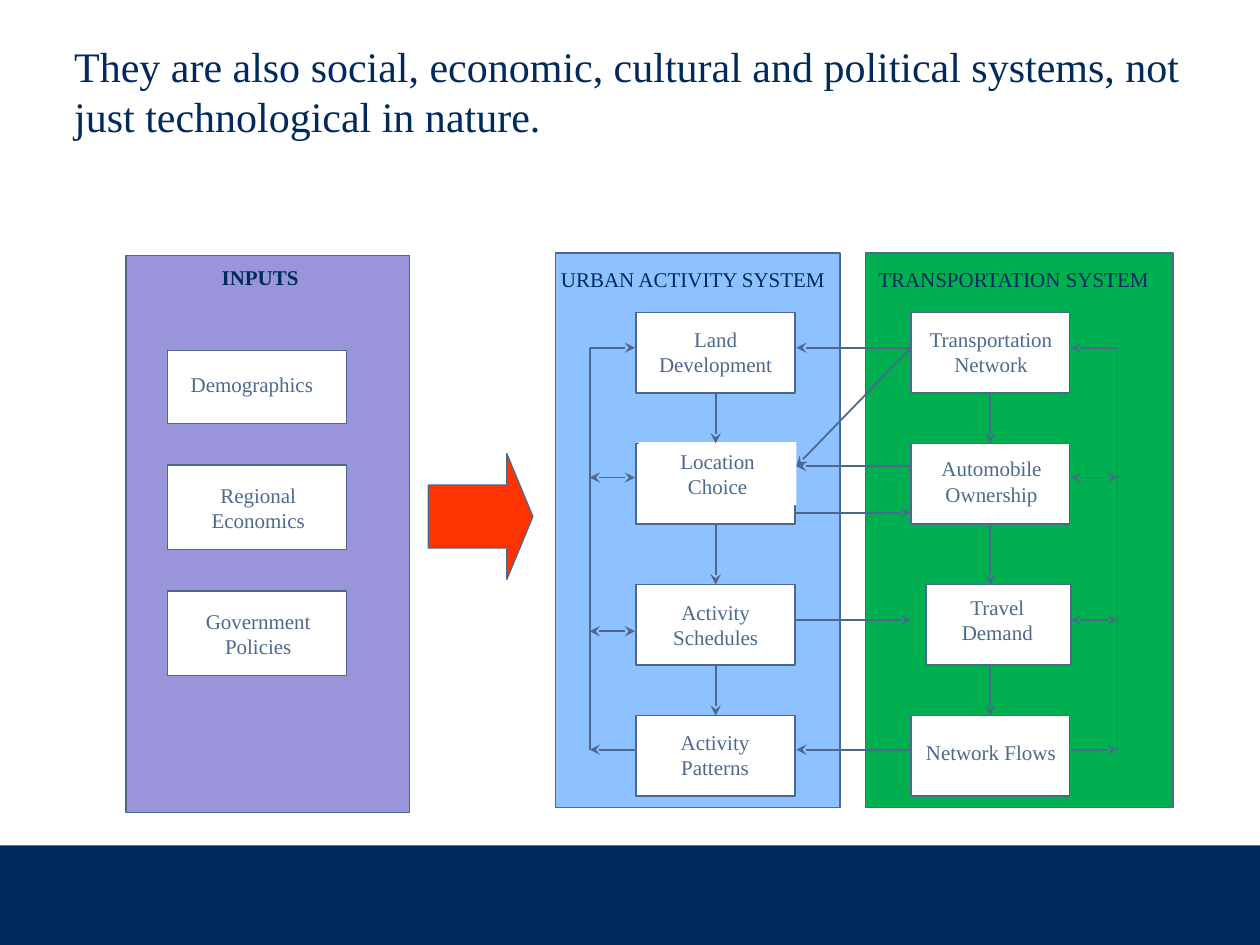
from typing import NamedTuple, Optional

from lxml import etree
from pptx import Presentation
from pptx.dml.color import RGBColor
from pptx.enum.shapes import MSO_CONNECTOR, MSO_SHAPE
from pptx.enum.text import MSO_AUTO_SIZE, PP_ALIGN
from pptx.oxml.ns import qn
from pptx.util import Inches, Pt

RECTANGLE, RIGHT_ARROW = MSO_SHAPE.RECTANGLE, MSO_SHAPE.RIGHT_ARROW
STRAIGHT = MSO_CONNECTOR.STRAIGHT
FIT_SHAPE = MSO_AUTO_SIZE.SHAPE_TO_FIT_TEXT
LEFT, CENTER = PP_ALIGN.LEFT, PP_ALIGN.CENTER
TOP_SITE, BOTTOM_SITE = 0, 2

NAVY = RGBColor(0x00, 0x2A, 0x5C)
SLATE = RGBColor(0x4C, 0x69, 0x8D)
WHITE = RGBColor(0xFF, 0xFF, 0xFF)
SKY = RGBColor(0x8D, 0xC1, 0xFF)
GREEN = RGBColor(0x00, 0xB0, 0x50)
LILAC = RGBColor(0x9A, 0x95, 0xDA)
RED = RGBColor(0xFF, 0x33, 0x00)
FONT = "Times New Roman"


class Box(NamedTuple):
    left: float
    top: float
    width: float
    height: float


class Node(NamedTuple):
    """A framed step with its label; wrap breaks the label at the box width."""
    frame: Box
    label: Box
    text: str
    wrap: bool = False


class Link(NamedTuple):
    x1: float
    y1: float
    x2: float
    y2: float
    head: bool = False
    tail: bool = True


def add_block(slide, box: Box, fill: RGBColor, line_width: Optional[float] = None,
              kind=RECTANGLE):
    block = slide.shapes.add_shape(kind, *map(Inches, box))
    block.shadow.inherit = False
    block.fill.solid()
    block.fill.fore_color.rgb = fill
    if line_width is None:
        block.line.fill.background()
    else:
        block.line.color.rgb = SLATE
        block.line.width = Pt(line_width)
    return block


def add_text(slide, box: Box, text: str, color: RGBColor, size: int = 12,
             wrap: bool = False, align=CENTER, bold: bool = False,
             fill: Optional[RGBColor] = None) -> None:
    text_box = slide.shapes.add_textbox(*map(Inches, box))
    if fill is not None:
        text_box.fill.solid()
        text_box.fill.fore_color.rgb = fill
    frame = text_box.text_frame
    frame.text = text
    frame.word_wrap = wrap
    frame.auto_size = FIT_SHAPE
    font_values = {"name": FONT, "size": Pt(size), "bold": bold}
    for paragraph in frame.paragraphs:
        paragraph.alignment = align
        for attribute, value in font_values.items():
            setattr(paragraph.font, attribute, value)
        paragraph.font.color.rgb = color


def add_node(slide, node: Node, line_width: float):
    frame = add_block(slide, node.frame, WHITE, line_width)
    add_text(slide, node.label, node.text, SLATE, wrap=node.wrap, fill=WHITE)
    return frame


def add_link(slide, link: Link):
    connector = slide.shapes.add_connector(
        STRAIGHT, *map(Inches, (link.x1, link.y1, link.x2, link.y2)))
    connector.line.color.rgb = SLATE
    connector.line.width = Pt(1)
    line = connector.line._get_or_add_ln()
    for tag, wanted in (("a:headEnd", link.head), ("a:tailEnd", link.tail)):
        if wanted:
            etree.SubElement(line, qn(tag), type="stealth")
    etree.SubElement(connector._element.spPr, qn("a:effectLst"))
    return connector


ROW_TOPS = (2.48, 3.52, 4.64, 5.68)
FRAME_WIDTH, FRAME_HEIGHT = 1.26, 0.64
URBAN_LEFT, TRANSPORT_LEFT = 5.05, 7.23
URBAN_RIGHT, TRANSPORT_RIGHT = 6.32, 8.5
URBAN_BUS, TRANSPORT_BUS = 4.68, 8.87
FIRST_Y, LAST_Y = 2.76, 5.95

URBAN_FRAMES = [Box(URBAN_LEFT, top, FRAME_WIDTH, FRAME_HEIGHT) for top in ROW_TOPS]
TRANSPORT_FRAMES = [Box(TRANSPORT_LEFT, top, FRAME_WIDTH, FRAME_HEIGHT) for top in ROW_TOPS]
TRANSPORT_FRAMES[2] = Box(7.35, ROW_TOPS[2], 1.15, FRAME_HEIGHT)

URBAN_NODES = [
    Node(URBAN_FRAMES[0], Box(5.13, 2.54, 1.1, 0.5), "Land\nDevelopment"),
    Node(URBAN_FRAMES[1], Box(5.07, 3.51, 1.25, 0.5), "Location Choice", True),
    Node(URBAN_FRAMES[2], Box(5.24, 4.71, 0.88, 0.5), "Activity\nSchedules"),
    Node(URBAN_FRAMES[3], Box(5.12, 5.74, 1.11, 0.5), "Activity Patterns", True),
]
TRANSPORT_NODES = [
    Node(TRANSPORT_FRAMES[0], Box(7.27, 2.54, 1.19, 0.5), "Transportation\nNetwork"),
    Node(TRANSPORT_FRAMES[1], Box(7.37, 3.57, 1, 0.5), "Automobile\nOwnership"),
    Node(TRANSPORT_FRAMES[2], Box(7.37, 4.67, 1.09, 0.5), "Travel\nDemand", True),
    Node(TRANSPORT_FRAMES[3], Box(7.25, 5.82, 1.23, 0.3), "Network Flows"),
]
INPUT_NODES = [
    Node(Box(1.33, 2.78, 1.42, 0.58), Box(1.41, 2.9, 1.18, 0.3), "Demographics"),
    Node(Box(1.33, 3.69, 1.42, 0.67), Box(1.58, 3.78, 0.94, 0.5), "Regional\nEconomics"),
    Node(Box(1.33, 4.69, 1.42, 0.67), Box(1.53, 4.78, 1.04, 0.5), "Government\nPolicies"),
]
CROSS_LINKS = [
    Link(TRANSPORT_LEFT, FIRST_Y, URBAN_RIGHT, FIRST_Y),
    Link(TRANSPORT_LEFT, 3.7, URBAN_RIGHT, 3.7),
    Link(TRANSPORT_LEFT, FIRST_Y, URBAN_RIGHT, 3.7),
    Link(URBAN_RIGHT, 4.07, TRANSPORT_LEFT, 4.07),
    Link(URBAN_RIGHT, 4.92, TRANSPORT_LEFT, 4.92),
    Link(TRANSPORT_LEFT, LAST_Y, URBAN_RIGHT, LAST_Y),
]


def add_feedback(slide, bus_x: float, edge_x: float, middle_ys: tuple) -> None:
    """Draw the loop from the last step back to the earlier ones."""
    add_link(slide, Link(edge_x, LAST_Y, bus_x, LAST_Y))
    add_link(slide, Link(bus_x, LAST_Y, bus_x, FIRST_Y, tail=False))
    add_link(slide, Link(bus_x, FIRST_Y, edge_x, FIRST_Y))
    for y in middle_ys:
        add_link(slide, Link(bus_x, y, edge_x, y, head=True))


def add_chain(slide, nodes: list, center_x: float) -> None:
    """Draw a column of steps joined downwards, glued where a frame is centred."""
    frames = [add_node(slide, node, 1) for node in nodes]
    centred = [abs(n.frame.left + n.frame.width / 2 - center_x) < 0.02 for n in nodes]
    for i in range(len(nodes) - 1):
        upper, lower = nodes[i].frame, nodes[i + 1].frame
        link = add_link(slide, Link(center_x, upper.top + upper.height, center_x, lower.top))
        if centred[i]:
            link.begin_connect(frames[i], BOTTOM_SITE)
        if centred[i + 1]:
            link.end_connect(frames[i + 1], TOP_SITE)


def main() -> None:
    presentation = Presentation()
    presentation.slide_width, presentation.slide_height = Inches(10), Inches(7.5)
    slide = presentation.slides.add_slide(presentation.slide_layouts[6])

    add_block(slide, Box(0, 6.71, 10, 0.79), NAVY)
    add_text(slide, Box(0.49, 0.27, 9.28, 0.91),
             "They are also social, economic, cultural and political systems, "
             "not just technological in nature.", NAVY, size=24, wrap=True, align=LEFT)

    add_block(slide, Box(4.41, 2.01, 2.26, 4.4), SKY, 1)
    add_block(slide, Box(6.87, 2.01, 2.44, 4.4), GREEN, 1)
    add_chain(slide, URBAN_NODES, URBAN_LEFT + FRAME_WIDTH / 2)
    add_feedback(slide, URBAN_BUS, 5.04, (3.79, 5.01))
    add_chain(slide, TRANSPORT_NODES, TRANSPORT_LEFT + FRAME_WIDTH / 2)
    add_feedback(slide, TRANSPORT_BUS, TRANSPORT_RIGHT, (3.79, 4.92))
    for link in CROSS_LINKS:
        add_link(slide, link)
    add_text(slide, Box(4.34, 2.07, 2.32, 0.3), "URBAN ACTIVITY SYSTEM", NAVY)
    add_text(slide, Box(6.86, 2.07, 2.37, 0.3), "TRANSPORTATION SYSTEM", NAVY)

    add_block(slide, Box(1, 2.03, 2.25, 4.42), LILAC, 0.75)
    for node in INPUT_NODES:
        add_node(slide, node, 0.75)
    flow_arrow = add_block(slide, Box(3.4, 3.6, 0.83, 1), RED, 0.75, RIGHT_ARROW)
    flow_arrow.adjustments[0], flow_arrow.adjustments[1] = 0.5, 0.25
    add_text(slide, Box(1.66, 2.05, 0.81, 0.3), "INPUTS", NAVY, bold=True)

    presentation.save("out.pptx")


if __name__ == "__main__":
    main()
